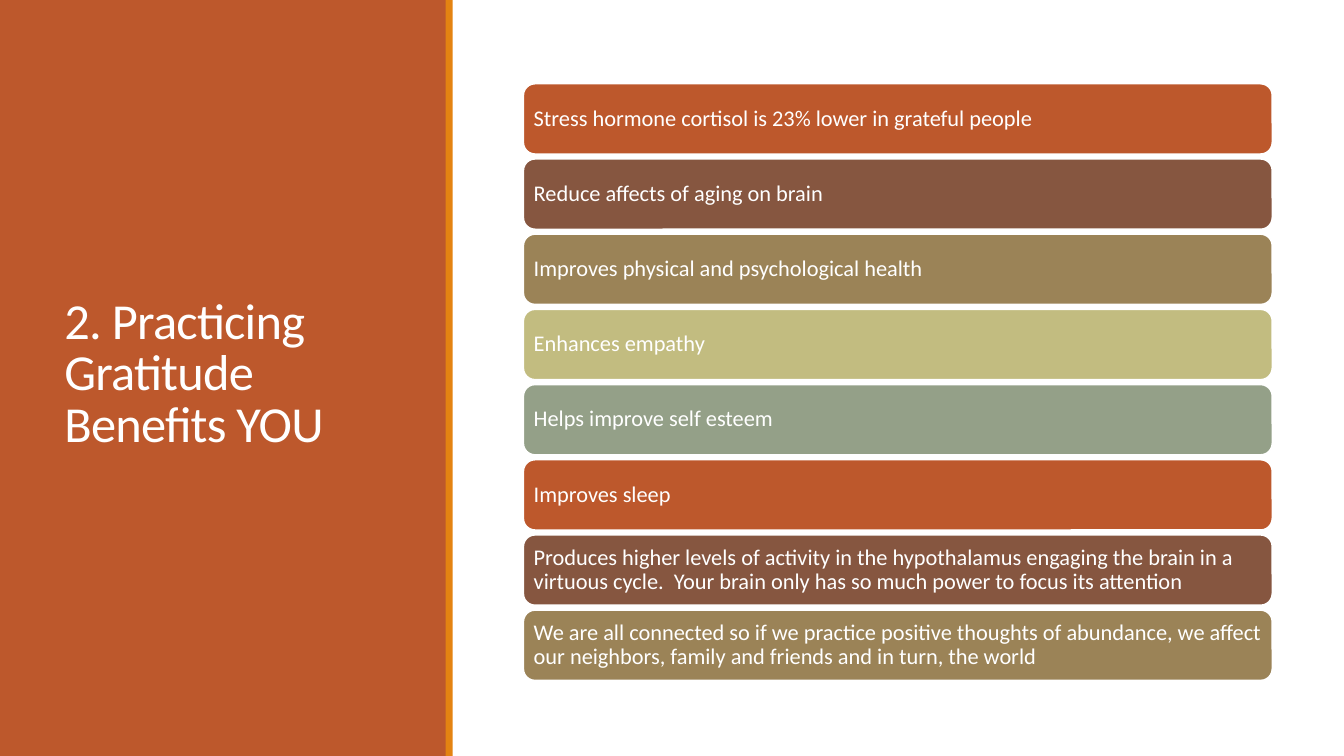
"""Build the slide on the benefits of practicing gratitude."""
from pptx import Presentation
from pptx.dml.color import RGBColor
from pptx.enum.shapes import MSO_SHAPE
from pptx.enum.text import MSO_ANCHOR, PP_ALIGN
from pptx.util import Inches, Pt

RECT, ROUNDED = MSO_SHAPE.RECTANGLE, MSO_SHAPE.ROUNDED_RECTANGLE
MIDDLE, LEFT = MSO_ANCHOR.MIDDLE, PP_ALIGN.LEFT

WHITE = RGBColor(0xFF, 0xFF, 0xFF)
RUST = RGBColor(0xBD, 0x58, 0x2C)
ORANGE = RGBColor(0xE4, 0x83, 0x12)
BROWN = RGBColor(0x86, 0x56, 0x40)
TAN = RGBColor(0x9B, 0x83, 0x57)
OLIVE = RGBColor(0xC2, 0xBC, 0x80)
SAGE = RGBColor(0x94, 0xA0, 0x88)
BAR_COLORS = [RUST, BROWN, TAN, OLIVE, SAGE]

TITLE = "2. Practicing Gratitude Benefits YOU"
BENEFITS = [
    "Stress hormone cortisol is 23% lower in grateful people",
    "Reduce affects of aging on brain",
    "Improves physical and psychological health",
    "Enhances empathy",
    "Helps improve self esteem",
    "Improves sleep",
    "Produces higher levels of activity in the hypothalamus engaging the brain in a "
    "virtuous cycle.  Your brain only has so much power to focus its attention",
    "We are all connected so if we practice positive thoughts of abundance, we affect "
    "our neighbors, family and friends and in turn, the world",
]

BAR_LEFT, BAR_TOP, BAR_WIDTH, BAR_HEIGHT = 5.19, 0.83, 7.43, 0.7
BAR_PITCH = 0.746


def add_block(s, kind, box, fill, line=None):
    sp = s.shapes.add_shape(kind, *map(Inches, box))
    sp.shadow.inherit = False
    sp.fill.solid()
    sp.fill.fore_color.rgb = fill
    if line is None:
        sp.line.fill.background()
    else:
        sp.line.color.rgb = line
        sp.line.width = Pt(1.25)
    return sp


def write(sp, text, size, spacing, inset=(0.1, 0.05), tracking=0):
    tf = sp.text_frame
    tf.word_wrap = True
    tf.vertical_anchor = MIDDLE
    tf.margin_left = tf.margin_right = Inches(inset[0])
    tf.margin_top = tf.margin_bottom = Inches(inset[1])
    p = tf.paragraphs[0]
    p.alignment = LEFT
    p.line_spacing = spacing
    r = p.add_run()
    r.text = text
    r.font.name = "Calibri"
    r.font.size = Pt(size)
    r.font.color.rgb = WHITE
    if tracking:
        r.font._element.set("spc", str(int(tracking * 100)))


def main():
    prs = Presentation()
    prs.slide_width, prs.slide_height = Inches(13.33), Inches(7.5)
    s = prs.slides.add_slide(prs.slide_layouts[6])

    add_block(s, RECT, (0, 0, 4.43, 7.5), RUST)
    title = s.shapes.add_textbox(*map(Inches, (0.54, 0.57, 3.37, 6.31)))
    write(title, TITLE, size=36, spacing=0.85, tracking=-0.5)
    add_block(s, RECT, (4.42, 0, 0.07, 7.5), ORANGE)

    for i, benefit in enumerate(BENEFITS):
        box = (BAR_LEFT, BAR_TOP + i * BAR_PITCH, BAR_WIDTH, BAR_HEIGHT)
        bar = add_block(s, ROUNDED, box, BAR_COLORS[i % len(BAR_COLORS)], line=WHITE)
        write(bar, benefit, size=16, spacing=0.9, inset=(0.07, 0.07))

    prs.save("out.pptx")


if __name__ == "__main__":
    main()
